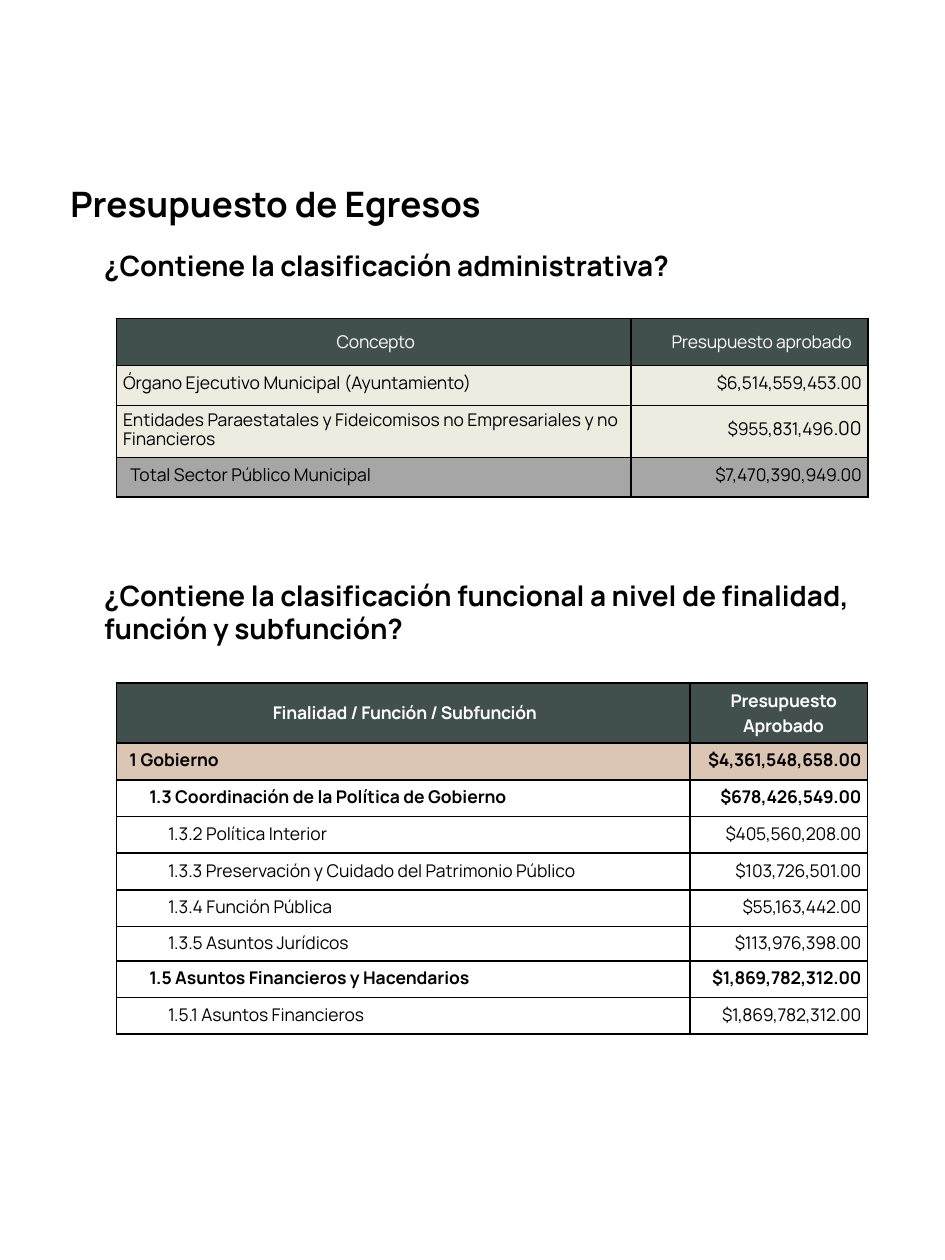
from lxml import etree
from pptx import Presentation
from pptx.dml.color import RGBColor
from pptx.enum.text import MSO_ANCHOR, MSO_AUTO_SIZE, PP_ALIGN
from pptx.oxml.ns import qn
from pptx.util import Cm, Pt

MIDDLE = MSO_ANCHOR.MIDDLE
GROW = MSO_AUTO_SIZE.SHAPE_TO_FIT_TEXT
LEFT, CENTER, RIGHT = PP_ALIGN.LEFT, PP_ALIGN.CENTER, PP_ALIGN.RIGHT

THEME = {
    "font": "Manrope", "title": 20, "head": 16, "body": 10, "cents": 11,
    "black": "000000", "white": "FFFFFF", "green": "41504D",
    "cream": "EEECE1", "gray": "A6A6A6", "sand": "DBC5B3",
}

HEADS = [
    ("Presupuesto de Egresos", "title", 1.17, 3.56, 1.12),
    ("¿Contiene la clasificación administrativa?", "head", 1.85, 4.88, 0.94),
    ("¿Contiene la clasificación funcional a nivel de finalidad, función y subfunción?",
     "head", 1.85, 11.53, 1.63),
]

ADMIN = {
    "top": 6.42, "cols": (10.37, 4.78), "bold": False, "line": 11.1,
    "head": [
        ("Concepto", {"alignment": CENTER}, 0.08, 0),
        ("Presupuesto aprobado", {"alignment": LEFT}, 0.69, 0),
    ],
    "high": 0.95,
    "rows": [
        ("Órgano Ejecutivo Municipal (Ayuntamiento)", ["$6,514,559,453.00"], "cream", 0, False, 0.8),
        ("Entidades Paraestatales y Fideicomisos no Empresariales y no Financieros",
         ["$955,831,496", ".00"], "cream", 0, False, 1.05),
        ("Total Sector Público Municipal", ["$7,470,390,949.00"], "gray", 0.15, False, 0.8),
    ],
}

STEPS = (0.13, 0.53, 0.91)
ITEMS = [
    ("1 Gobierno", "$4,361,548,658.00", 0),
    ("1.3 Coordinación de la Política de Gobierno", "$678,426,549.00", 1),
    ("1.3.2 Política Interior", "$405,560,208.00", 2),
    ("1.3.3 Preservación y Cuidado del Patrimonio Público", "$103,726,501.00", 2),
    ("1.3.4 Función Pública", "$55,163,442.00", 2),
    ("1.3.5 Asuntos Jurídicos", "$113,976,398.00", 2),
    ("1.5 Asuntos Financieros y Hacendarios", "$1,869,782,312.00", 1),
    ("1.5.1 Asuntos Financieros", "$1,869,782,312.00", 2),
]
FUNCTIONS = {
    "top": 13.77, "cols": (11.56, 3.58), "bold": True, "line": 12.3,
    "head": [
        ("Finalidad / Función / Subfunción", {"alignment": LEFT}, 3.02, 0),
        ("Presupuesto Aprobado", {"alignment": LEFT, "line_spacing": 1.05}, 0.94, -0.25),
    ],
    "high": 1.21,
    "rows": [
        (label, [sum_], None if level else "sand", STEPS[level], level < 2,
         0.69 if label.startswith("1.3.5") else 0.74)
        for label, sum_, level in ITEMS
    ],
}


def shade(name):
    return RGBColor.from_string(THEME[name])


def apply(target, values):
    for name, value in values.items():
        setattr(target, name, value)


def write(para, text, size, color="black", bold=False, tight=False):
    run = para.add_run()
    run.text = text
    apply(run.font, {"name": THEME["font"], "size": Pt(THEME[size]), "bold": bold})
    run.font.color.rgb = shade(color)
    if tight:
        run._r.get_or_add_rPr().set("spc", "-10")


def border(cell):
    props = cell._tc.get_or_add_tcPr()
    for side in ("lnL", "lnR", "lnT", "lnB"):
        line = etree.SubElement(props, qn("a:" + side), w=str(Pt(1)))
        fill = etree.SubElement(line, qn("a:solidFill"))
        etree.SubElement(fill, qn("a:srgbClr"), val=THEME["black"])


def put(cell, texts, form, fill, left=0, first=0, **look):
    apply(cell, {
        "vertical_anchor": MIDDLE, "margin_left": Cm(0.13), "margin_right": Cm(0.13),
        "margin_top": Cm(0.1), "margin_bottom": Cm(0.1),
    })
    border(cell)
    if fill:
        cell.fill.solid()
        cell.fill.fore_color.rgb = shade(fill)
    else:
        cell.fill.background()
    para = cell.text_frame.paragraphs[0]
    apply(para, form)
    if left:
        props = para._p.get_or_add_pPr()
        props.set("marL", str(Cm(left)))
        props.set("indent", str(Cm(first)))
    for text, size in zip(texts, ("body", "cents")):
        write(para, text, size, **look)


def add_grid(slide, data):
    rows = data["rows"]
    highs = [data["high"]] + [row[-1] for row in rows]
    table = slide.shapes.add_table(
        len(highs), 2, Cm(2.35), Cm(data["top"]),
        Cm(sum(data["cols"])), Cm(sum(highs))).table
    apply(table, {"first_row": False, "horz_banding": False})
    for col, wide in zip(table.columns, data["cols"]):
        col.width = Cm(wide)
    for row, high in zip(table.rows, highs):
        row.height = Cm(high)
    for col, (text, form, left, first) in enumerate(data["head"]):
        put(table.cell(0, col), [text], form, "green", left, first,
            color="white", bold=data["bold"], tight=True)
    space = {"line_spacing": Pt(data["line"])}
    for num, (label, sums, fill, left, bold, _) in enumerate(rows, 1):
        put(table.cell(num, 0), [label], {"alignment": LEFT, **space}, fill, left, bold=bold)
        put(table.cell(num, 1), sums, {"alignment": RIGHT, **space}, fill, bold=bold, tight=True)


def main():
    deck = Presentation()
    apply(deck, {"slide_width": Cm(19.05), "slide_height": Cm(25.4)})
    slide = deck.slides.add_slide(deck.slide_layouts[6])
    for text, size, left, top, high in HEADS:
        frame = slide.shapes.add_textbox(Cm(left), Cm(top), Cm(15.62), Cm(high)).text_frame
        apply(frame, {"word_wrap": True, "auto_size": GROW})
        write(frame.paragraphs[0], text, size, bold=True)
    for data in (ADMIN, FUNCTIONS):
        add_grid(slide, data)
    deck.save("out.pptx")


if __name__ == "__main__":
    main()
